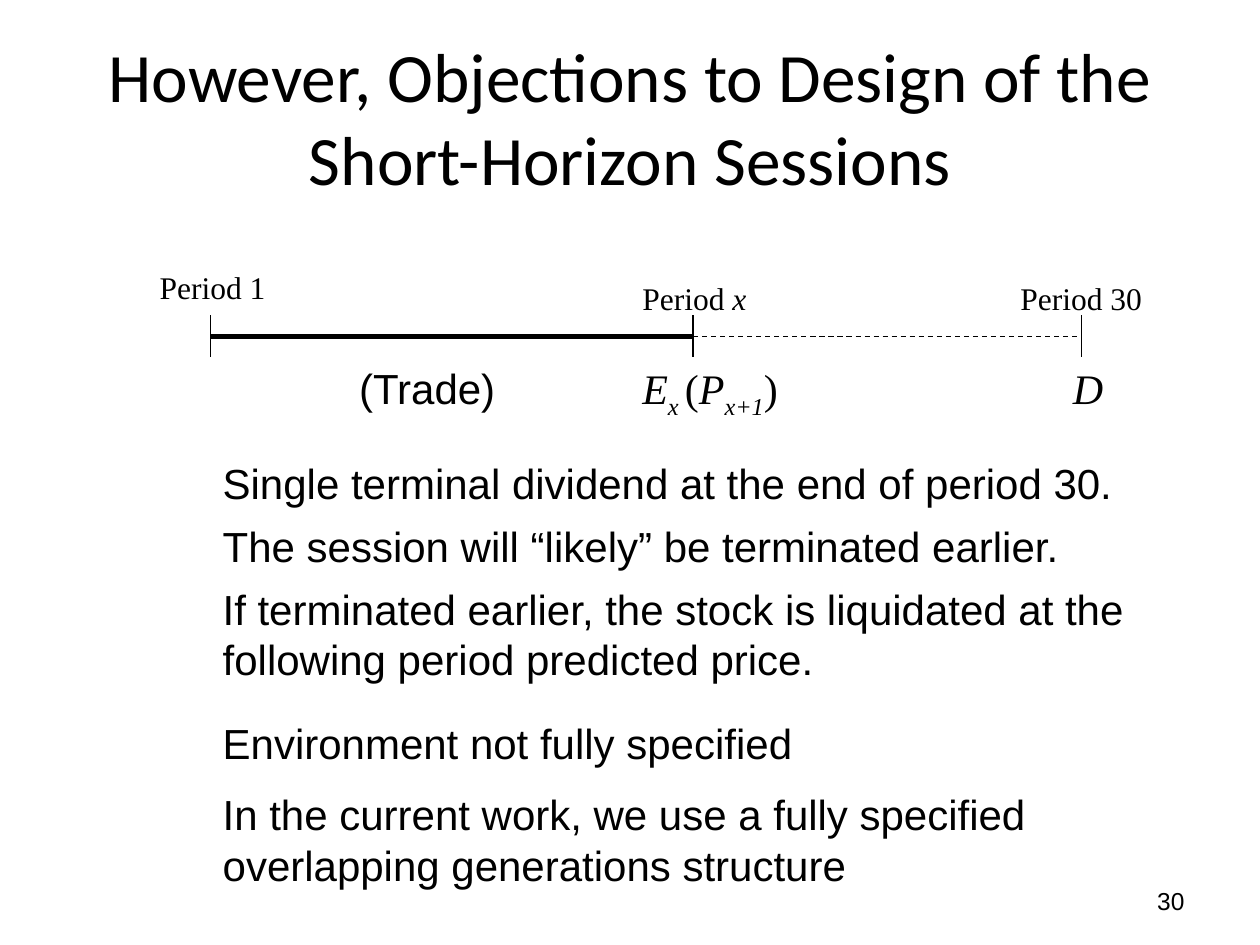
"""Build the slide on objections to the design of the short-horizon sessions."""
import pptx
import pptx.dml.color
import pptx.enum.dml
import pptx.enum.shapes
import pptx.enum.text
import pptx.oxml
import pptx.util

Cm = pptx.util.Cm
Pt = pptx.util.Pt
ALIGN = pptx.enum.text.PP_ALIGN
ANCHOR = pptx.enum.text.MSO_ANCHOR
AUTO_SIZE = pptx.enum.text.MSO_AUTO_SIZE
COLORS = {"ink": "000000"}
INK = pptx.dml.color.RGBColor.from_string(COLORS["ink"])
SANS, SERIF, HEADING = "Arial", "Times New Roman", "Calibri"

presentation = pptx.Presentation()
presentation.slide_width = Cm(25.4)
presentation.slide_height = Cm(19.05)
slide = presentation.slides.add_slide(presentation.slide_layouts[5])


def add_text(left, top, width, height, paragraphs, font_name, size):
    """Add a text box whose paragraphs are lists of (text, italic, baseline) runs."""
    box = slide.shapes.add_textbox(Cm(left), Cm(top), Cm(width), Cm(height))
    frame = box.text_frame
    frame.word_wrap = True
    frame.auto_size = AUTO_SIZE.SHAPE_TO_FIT_TEXT
    for index, runs in enumerate(paragraphs):
        paragraph = frame.add_paragraph() if index else frame.paragraphs[0]
        for text, italic, baseline in runs:
            run = paragraph.add_run()
            run.text = text
            run.font.name = font_name
            run.font.size = Pt(size)
            run.font.italic = italic
            run.font.color.rgb = INK
            if baseline:
                run.font._element.set("baseline", str(baseline * 1000))
    return frame


def add_line(start_x, start_y, end_x, end_y, width):
    """Add a straight line without a shadow."""
    line = slide.shapes.add_connector(
        pptx.enum.shapes.MSO_CONNECTOR.STRAIGHT,
        Cm(start_x), Cm(start_y), Cm(end_x), Cm(end_y))
    line.line.color.rgb = INK
    line.line.width = Pt(width)
    properties = line._element.spPr
    properties.append(pptx.oxml.parse_xml(
        '<a:effectLst xmlns:a="http://schemas.openxmlformats.org/drawingml/2006/main"/>'))
    return line


title = slide.shapes.title
title.left, title.top, title.width, title.height = Cm(1.27), Cm(0.76), Cm(22.86), Cm(3.18)
title.text_frame.text = "However, Objections to Design of the Short-Horizon Sessions"
title.text_frame.word_wrap = True
title.text_frame.auto_size = AUTO_SIZE.NONE
title.text_frame.vertical_anchor = ANCHOR.MIDDLE
title_paragraph = title.text_frame.paragraphs[0]
title_paragraph.alignment = ALIGN.CENTER
title_font = title_paragraph.runs[0].font
title_font.name, title_font.size, title_font.color.rgb = HEADING, Pt(39.6), INK

page_number = add_text(18.21, 17.65, 5.92, 1.02, [[("30", False, 0)]], SANS, 14)
page_number.auto_size = AUTO_SIZE.NONE
page_number.vertical_anchor = ANCHOR.MIDDLE
page_number.paragraphs[0].alignment = ALIGN.RIGHT

first_x, middle_x, last_x = 4.24, 13.97, 21.8
axis_y, tick_top, tick_bottom = 6.78, 6.35, 7.19
add_line(first_x, axis_y, middle_x, axis_y, 3)
remaining = add_line(middle_x, axis_y, last_x, axis_y, 0.75)
remaining.line.dash_style = pptx.enum.dml.MSO_LINE.DASH
for tick_x in (first_x, middle_x, last_x):
    add_line(tick_x, tick_top, tick_x, tick_bottom, 0.75)

period_labels = [
    (2.97, 5.28, 2.75, [("Period 1", False, 0)]),
    (12.7, 5.51, 2.98, [("Period ", False, 0), ("x", True, 0)]),
    (20.32, 5.51, 2.98, [("Period 30", False, 0)]),
]
for left, top, width, runs in period_labels:
    add_text(left, top, width, 1.02, [runs], SERIF, 18)

expected_price = [("E", True, 0), ("x ", True, -25), ("(", False, 0),
                  ("P", True, 0), ("x+1", True, -25), (")", False, 0)]
value_labels = [
    (6.99, 3.3, [("(Trade)", False, 0)], SANS),
    (12.7, 3.42, expected_price, SERIF),
    (21.38, 1.14, [("D", True, 0)], SERIF),
]
for left, width, runs, font_name in value_labels:
    add_text(left, 7.19, width, 1.27, [runs], font_name, 24)

points = [
    ("Single terminal dividend at the end of period 30.", 12, 0),
    ("The session will “likely” be terminated earlier.", 7.2, 0),
    ("If terminated earlier, the stock is liquidated at the following period "
     "predicted price.", 7.2, 7.2),
    ("Environment not fully specified", 12, 0),
    ("In the current work, we use a fully specified overlapping generations "
     "structure", 12, 0),
]
body = add_text(4.24, 9.09, 19.05, 9.4,
                [[(text, False, 0)] for text, before, after in points], SANS, 24)
for paragraph, (text, before, after) in zip(body.paragraphs, points):
    paragraph.line_spacing = Pt(28.8)
    paragraph.space_before = Pt(before)
    paragraph.space_after = Pt(after)

presentation.save("out.pptx")
